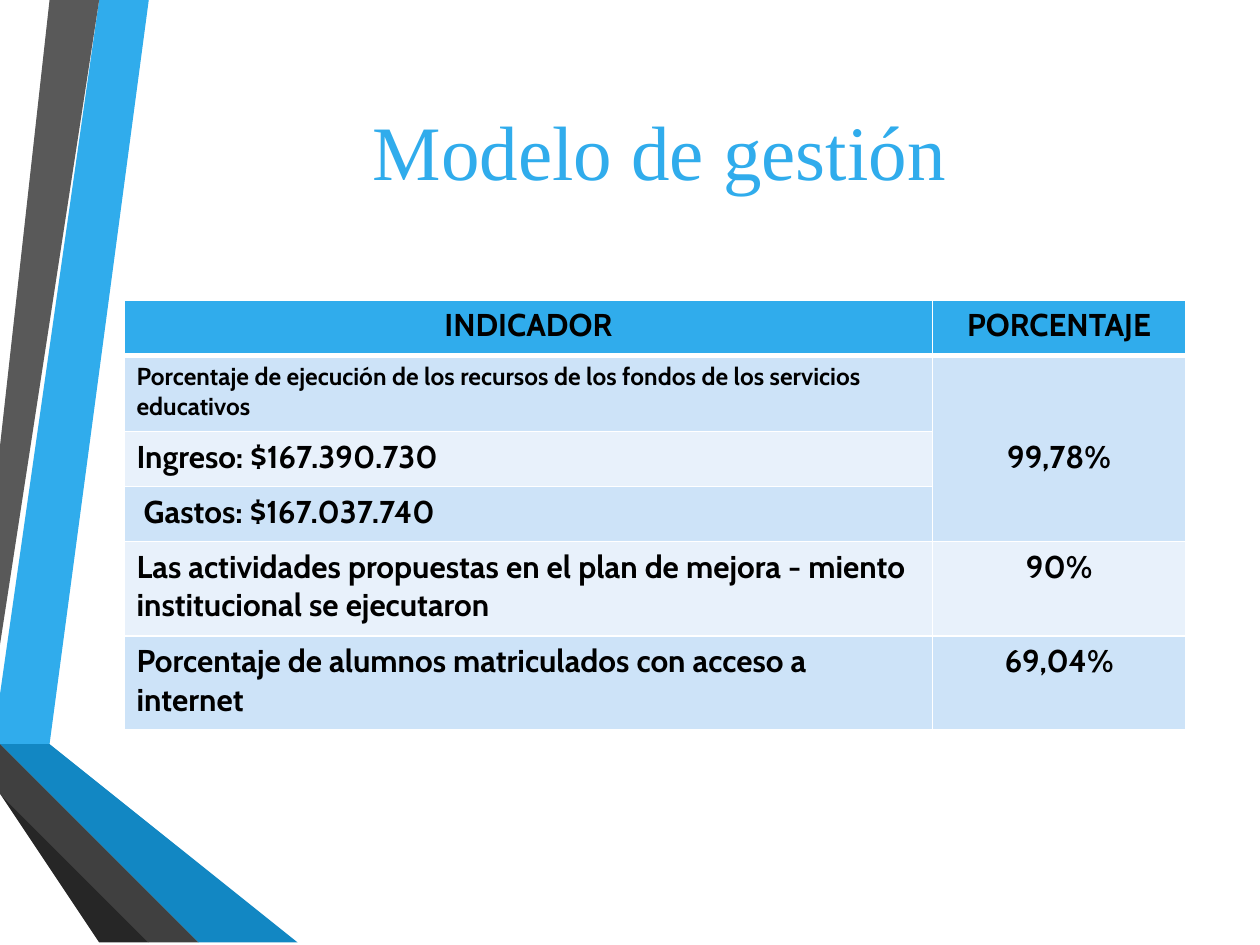
from lxml.etree import SubElement
from pptx import Presentation
from pptx.dml.color import RGBColor
from pptx.enum.text import MSO_ANCHOR, PP_ALIGN
from pptx.oxml.ns import qn
from pptx.util import Cm, Pt

BLUE = RGBColor(0x30, 0xAC, 0xEC)
MID_BLUE = RGBColor(0x12, 0x87, 0xC3)
DEEP_BLUE = RGBColor(0x0C, 0x5A, 0x82)
GRAY = RGBColor(0x59, 0x59, 0x59)
DARK_GRAY = RGBColor(0x40, 0x40, 0x40)
NEAR_BLACK = RGBColor(0x26, 0x26, 0x26)
BAND_DARK = RGBColor(0xCD, 0xE3, 0xF8)
BAND_LIGHT = RGBColor(0xE8, 0xF1, 0xFB)
BLACK = RGBColor(0, 0, 0)
WHITE = RGBColor(0xFF, 0xFF, 0xFF)


def set_borders(cell, widths):
    """Draw white cell borders; widths are in points, by side."""
    properties = cell._tc.get_or_add_tcPr()
    for index, side in enumerate("LRTB"):
        line = SubElement(properties, qn(f"a:ln{side}"), w=str(Pt(widths.get(side, 1))))
        fill = SubElement(line, qn("a:solidFill"))
        SubElement(fill, qn("a:srgbClr"), val=str(WHITE))
        properties.insert(index, line)


presentation = Presentation()
presentation.slide_width = Cm(25.4)
presentation.slide_height = Cm(19.05)
slide = presentation.slides.add_slide(presentation.slide_layouts[6])

# Folded ribbons on the left, corners in centimetres
ribbons = [
    (BLUE, [(0, 13.82), (0, 14.6), (0.56, 14.71), (2.97, 0), (2.26, 0)]),
    (GRAY, [(2.11, 0), (1.4, 0), (0, 8.53), (0, 12.85)]),
    (NEAR_BLACK, [(0, 15.72), (0, 15.77), (2.36, 19.05), (2.51, 19.05)]),
    (DEEP_BLUE, [(0, 14.71), (0, 14.73), (3.96, 19.05), (4.14, 19.05)]),
    (MID_BLUE, [(0, 14.71), (4.14, 19.05), (5.92, 19.05), (0.56, 14.71), (0, 14.6)]),
    (DARK_GRAY, [(0, 15.72), (2.51, 19.05), (3.84, 19.05), (0, 14.88)]),
]
for color, corners in ribbons:
    builder = slide.shapes.build_freeform(*corners[0], scale=Cm(1))
    builder.add_line_segments(corners[1:], close=True)
    shape = builder.convert_to_shape()
    shape.shadow.inherit = False
    shape.fill.solid()
    shape.fill.fore_color.rgb = color
    shape.line.fill.background()

# Indicator table
rows = [
    ("INDICADOR", "PORCENTAJE", 1.11),
    ("Porcentaje de ejecución de los recursos de los fondos de los servicios educativos",
     "99,78%", 1.54),
    ("Ingreso: $167.390.730", "", 1.11),
    (" Gastos: $167.037.740", "", 1.11),
    ("Las actividades propuestas en el plan de mejora - miento institucional se ejecutaron",
     "90%", 1.9),
    ("Porcentaje de alumnos matriculados con acceso a internet", "69,04%", 1.9),
]
table = slide.shapes.add_table(len(rows), 2, Cm(2.5), Cm(6.05), Cm(21.4), Cm(8.67)).table
table.columns[0].width = Cm(16.3)
table.columns[1].width = Cm(5.1)
for row, (indicator, percentage, height) in enumerate(rows):
    table.rows[row].height = Cm(height)
    for column, text in enumerate((indicator, percentage)):
        cell = table.cell(row, column)
        cell.text = text
        cell.fill.solid()
        if row == 0:
            cell.fill.fore_color.rgb = BLUE
        else:
            cell.fill.fore_color.rgb = BAND_DARK if row % 2 else BAND_LIGHT
        set_borders(cell, {0: {"B": 3}, 1: {"T": 3}}.get(row, {}))
        paragraph = cell.text_frame.paragraphs[0]
        centered = row == 0 or column == 1
        paragraph.alignment = PP_ALIGN.CENTER if centered else PP_ALIGN.LEFT
        paragraph.font.name = "Cabin"
        paragraph.font.size = Pt(14 if (row, column) == (1, 0) else 18)
        paragraph.font.bold = True
        paragraph.font.color.rgb = BLACK

# One percentage covers execution, income and expenses
execution_cell = table.cell(1, 1)
execution_cell.merge(table.cell(3, 1))
execution_cell.vertical_anchor = MSO_ANCHOR.MIDDLE
execution_cell.margin_top = Cm(0.5)

# Title
title = slide.shapes.add_textbox(Cm(3.3), Cm(1.12), Cm(20), Cm(3.8))
title.text_frame.word_wrap = True
title.text_frame.vertical_anchor = MSO_ANCHOR.MIDDLE
paragraph = title.text_frame.paragraphs[0]
paragraph.text = "Modelo de gestión"
paragraph.alignment = PP_ALIGN.CENTER
paragraph.font.name = "Times New Roman"
paragraph.font.size = Pt(44)
paragraph.font.color.rgb = BLUE

presentation.save("out.pptx")
